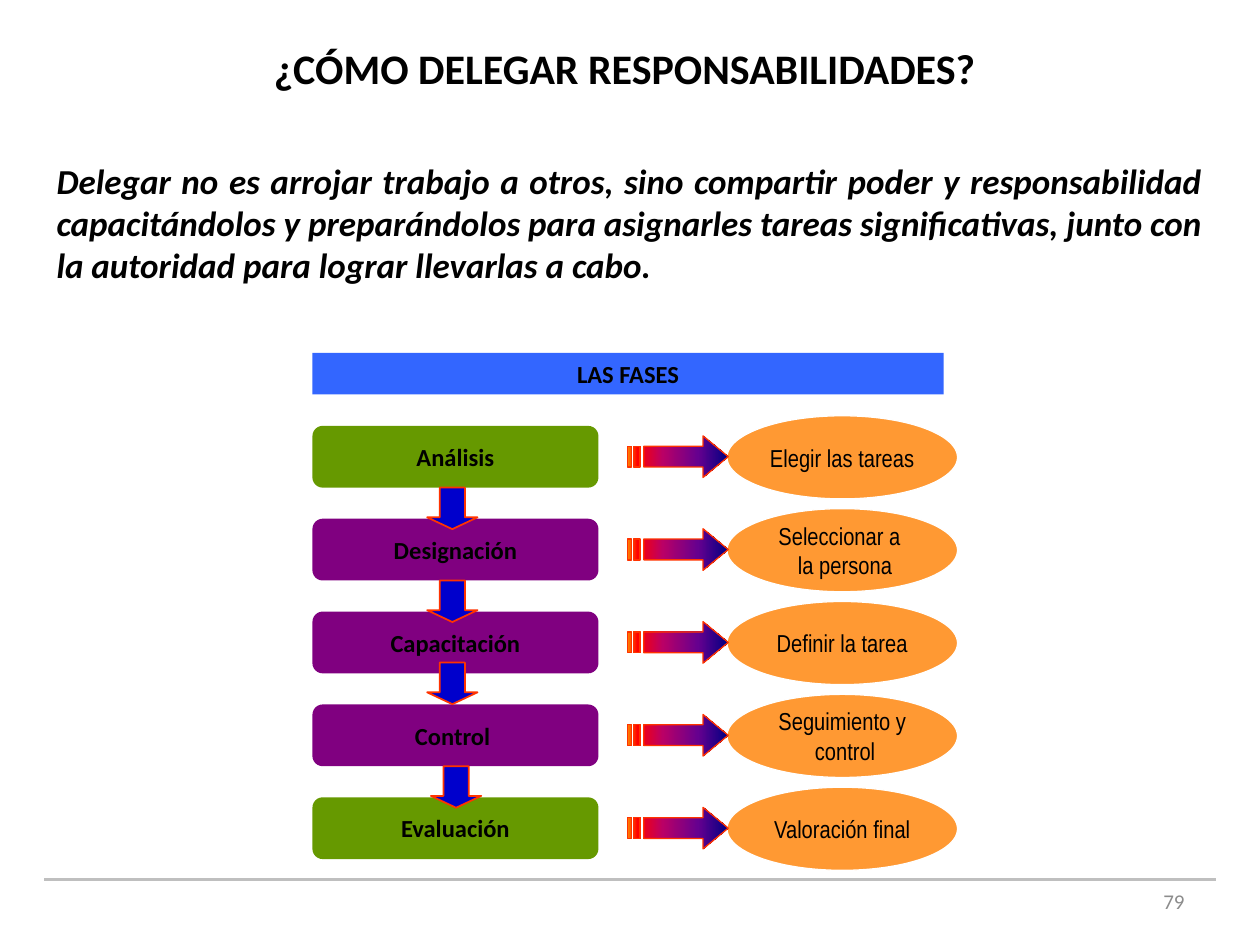
from dataclasses import dataclass

from lxml import etree
from pptx import Presentation
from pptx.dml.color import RGBColor
from pptx.enum.shapes import MSO_CONNECTOR, MSO_SHAPE
from pptx.enum.text import MSO_ANCHOR, PP_ALIGN
from pptx.oxml.ns import qn
from pptx.util import Inches, Pt

RECT, ROUNDED = MSO_SHAPE.RECTANGLE, MSO_SHAPE.ROUNDED_RECTANGLE
OVAL, DOWN = MSO_SHAPE.OVAL, MSO_SHAPE.DOWN_ARROW
STRAIGHT = MSO_CONNECTOR.STRAIGHT
TOP, MIDDLE = MSO_ANCHOR.TOP, MSO_ANCHOR.MIDDLE
CENTER, RIGHT, JUSTIFY = PP_ALIGN.CENTER, PP_ALIGN.RIGHT, PP_ALIGN.JUSTIFY

COLS, ROWS = 100, 75


@dataclass(frozen=True)
class Theme:
    ink: str = "000000"
    muted: str = "8C8C8C"
    rule: str = "BFBFBF"
    header: str = "3366FF"
    outer_phase: str = "669900"
    inner_phase: str = "800080"
    action: str = "FF9933"
    action_edge: str = "FFFFFF"
    step: str = "0000CC"
    arrow_edge: str = "FF3300"
    gradient: tuple = ((0, "FF8200"), (10, "FF0000"), (35, "BA0066"),
                       (70, "66008F"), (100, "000082"))
    font: str = "Calibri"
    narrow: str = "Arial Narrow"
    title_size: int = 24
    body_size: int = 20
    label_size: int = 14
    number_size: int = 12


class Board:
    """Draws on one slide; lengths are columns and rows of a 100 x 75 grid."""

    def __init__(self, prs, theme):
        self.theme = theme
        self.s = prs.slides.add_slide(prs.slide_layouts[5])
        self.col, self.row = prs.slide_width / COLS, prs.slide_height / ROWS

    def point(self, x, y):
        return round(x * self.col), round(y * self.row)

    def box(self, x, y, w, h):
        return *self.point(x, y), *self.point(w, h)

    def set_text(self, sp, text, size, align=CENTER, anchor=MIDDLE, wrap=True,
                 font=None, color=None, bold=False, italic=False):
        tf = sp.text_frame
        tf.text = text
        tf.word_wrap = wrap
        tf.vertical_anchor = anchor
        for p in tf.paragraphs:
            p.alignment = align
            for r in p.runs:
                r.font.name = font or self.theme.font
                r.font.size = Pt(size)
                r.font.bold, r.font.italic = bold, italic
                r.font.color.rgb = RGBColor.from_string(color or self.theme.ink)

    def edge(self, sp, color, width):
        sp.line.color.rgb = RGBColor.from_string(color)
        sp.line.width = Pt(width)

    def title(self, text, x, y, w, h):
        sp = self.s.shapes.title
        sp.left, sp.top, sp.width, sp.height = self.box(x, y, w, h)
        self.set_text(sp, text, self.theme.title_size, anchor=TOP, bold=True)

    def text(self, text, x, y, w, h, size, **style):
        sp = self.s.shapes.add_textbox(*self.box(x, y, w, h))
        self.set_text(sp, text, size, **style)

    def shape(self, kind, x, y, w, h, fill, edge=None, width=1, adjust=()):
        sp = self.s.shapes.add_shape(kind, *self.box(x, y, w, h))
        sp.shadow.inherit = False
        sp.fill.solid()
        sp.fill.fore_color.rgb = RGBColor.from_string(fill)
        if edge:
            self.edge(sp, edge, width)
        else:
            sp.line.fill.background()
        for i, value in enumerate(adjust):
            sp.adjustments[i] = value
        return sp

    def label(self, kind, text, *box, fill, edge=None, width=1, adjust=(), **style):
        sp = self.shape(kind, *box, fill, edge, width, adjust)
        self.set_text(sp, text, self.theme.label_size, wrap=False, **style)

    def rule(self, x, y, w):
        line = self.s.shapes.add_connector(
            STRAIGHT, *self.point(x, y), *self.point(x + w, y))
        self.edge(line, self.theme.rule, 2)
        etree.SubElement(line._element.spPr, qn("a:effectLst"))

    def striped_arrow(self, x, y):
        """Arrow 8 columns long and 3.3 rows high, with two stripes at its tail."""
        upper, lower, tip = 0.82, 2.47, 1.65
        head = [(6, 0), (6, upper), (1.3, upper), (1.3, lower),
                (6, lower), (6, 3.3), (8, tip)]
        stripes = [[(a, upper), (a, lower), (b, lower), (b, upper)]
                   for a, b in ((0.5, 1), (0, 0.3))]
        outline, *rest = [[self.point(x + dx, y + dy) for dx, dy in contour]
                          for contour in (head, *stripes)]
        fb = self.s.shapes.build_freeform(*outline[0])
        fb.add_line_segments(outline[1:], close=True)
        for contour in rest:
            fb.move_to(*contour[0])
            fb.add_line_segments(contour[1:], close=True)
        sp = fb.convert_to_shape()
        sp.shadow.inherit = False
        self.edge(sp, self.theme.arrow_edge, 0.75)
        self.gradient(sp)

    def gradient(self, sp):
        sp.fill.gradient()
        sp.fill.gradient_angle = 0
        stops = sp._element.spPr.find(qn("a:gradFill")).find(qn("a:gsLst"))
        for gs in list(stops):
            stops.remove(gs)
        for pos, color in self.theme.gradient:
            gs = etree.SubElement(stops, qn("a:gs"), pos=str(pos * 1000))
            etree.SubElement(gs, qn("a:srgbClr"), val=color)


def main():
    prs = Presentation()
    prs.slide_width, prs.slide_height = Inches(10), Inches(7.5)
    theme = Theme()
    board = Board(prs, theme)

    board.rule(3.5, 69.8, 93)
    board.text("Delegar no es arrojar trabajo a otros, sino compartir poder y "
               "responsabilidad capacitándolos y preparándolos para asignarles "
               "tareas significativas, junto con la autoridad para lograr "
               "llevarlas a cabo. ",
               3.5, 12.2, 92.9, 11.1, theme.body_size,
               align=JUSTIFY, anchor=TOP, bold=True, italic=True)
    board.title("¿CÓMO DELEGAR RESPONSABILIDADES? ", 16.1, 2.9, 67.7, 5)

    phases = [
        ("Análisis", "Elegir las tareas", theme.outer_phase),
        ("Designación", "Seleccionar a \n la persona", theme.inner_phase),
        ("Capacitación", "Definir la tarea", theme.inner_phase),
        ("Control ", "Seguimiento y\n control", theme.inner_phase),
        ("Evaluación", "Valoración final", theme.outer_phase),
    ]
    left, first, pitch, height = 24.8, 33.8, 7.37, 4.9
    tops = [first + i * pitch for i in range(len(phases))]

    board.label(RECT, "LAS FASES", left, 28, 50.1, 3.3,
                fill=theme.header, bold=True)
    for y, (phase, _, color) in zip(tops, phases):
        board.label(ROUNDED, phase, left, y, 22.7, height,
                    fill=color, adjust=(0.167,), bold=True)

    step_nudges = [(0, 0), (0, 0), (0, -0.85), (0.3, 0)]
    for y, (dx, dy) in zip(tops, step_nudges):
        board.shape(DOWN, 33.9 + dx, y + height + dy, 4, 3.3, theme.step,
                    theme.arrow_edge, adjust=(0.5, 0.285))

    for y, (_, action, _) in zip(tops, phases):
        board.label(OVAL, action, 57.7, y - 0.8, 18.3, 6.6, fill=theme.action,
                    edge=theme.action_edge, width=0.75, font=theme.narrow)
    for y in tops:
        board.striped_arrow(49.8, y + 0.8)

    board.text("79", 71.7, 69.5, 23.3, 4, theme.number_size,
               align=RIGHT, color=theme.muted)
    prs.save("out.pptx")


if __name__ == "__main__":
    main()
